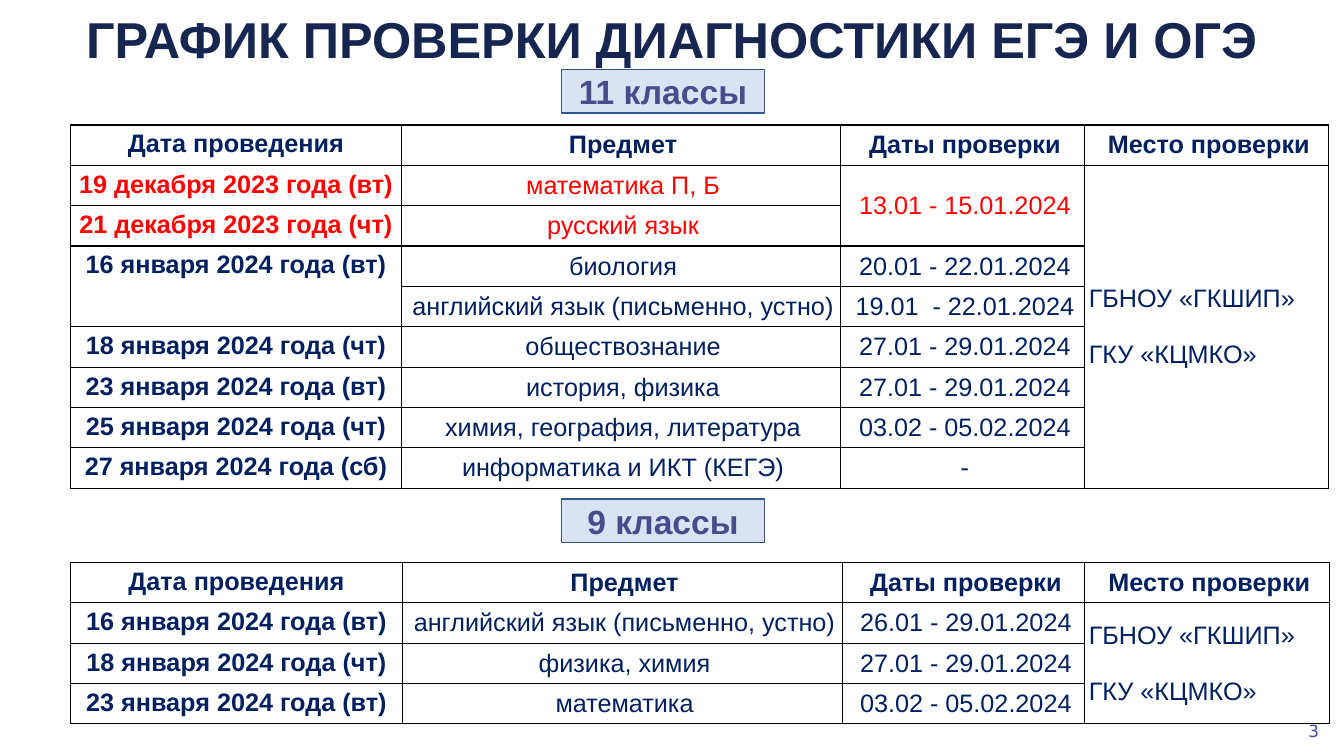
from pptx import Presentation
from pptx.dml.color import RGBColor
from pptx.enum.shapes import MSO_SHAPE as Shape
from pptx.enum.text import MSO_ANCHOR as Anchor, MSO_AUTO_SIZE as Fit, PP_ALIGN as Align
from pptx.oxml import parse_xml
from pptx.oxml.ns import nsdecls
from pptx.util import Inches, Pt

NAVY, RED, WHITE = "002060", "FF0000", "FFFFFF"
HEAD = ["Дата проведения", "Предмет", "Даты проверки", "Место проверки"]
PLACE = "ГБНОУ «ГКШИП»\nГКУ «КЦМКО»"

GRADE_11 = [
    HEAD,
    ["19 декабря 2023 года (вт)", "математика П, Б", "13.01 - 15.01.2024", PLACE],
    ["21 декабря 2023 года (чт)", "русский язык", None, None],
    ["16 января 2024 года (вт)", "биология", "20.01 - 22.01.2024", None],
    [None, "английский язык (письменно, устно)", "19.01  - 22.01.2024", None],
    ["18 января 2024 года (чт)", "обществознание", "27.01 - 29.01.2024", None],
    ["23 января 2024 года (вт)", "история, физика", "27.01 - 29.01.2024", None],
    ["25 января 2024 года (чт)", "химия, география, литература", "03.02 - 05.02.2024", None],
    ["27 января 2024 года (сб)", "информатика и ИКТ (КЕГЭ)", "-", None],
]
GRADE_9 = [
    HEAD,
    ["16 января 2024 года (вт)", "английский язык (письменно, устно)", "26.01 - 29.01.2024", PLACE],
    ["18 января 2024 года (чт)", "физика, химия", "27.01 - 29.01.2024", None],
    ["23 января 2024 года (вт)", "математика", "03.02 - 05.02.2024", None],
]


def color(code):
    return RGBColor.from_string(code)


class Page:
    font = "Arial"
    left = 0.7
    row = 0.4

    def __init__(self, deck):
        self.slide = deck.slides.add_slide(deck.slide_layouts[5])

    def style(self, par, size, tone, bold=False, align=Align.CENTER, font=None):
        par.alignment = align
        par.font.name = font or self.font
        par.font.size = Pt(size)
        par.font.bold = bold
        par.font.color.rgb = color(tone)

    def title(self, text):
        box = self.slide.shapes.title
        box.left, box.top = Inches(0), Inches(0.03)
        box.width, box.height = Inches(13.33), Inches(0.71)
        frame = box.text_frame
        frame.text = text
        frame.auto_size = Fit.SHAPE_TO_FIT_TEXT
        frame.vertical_anchor = Anchor.TOP
        par = frame.paragraphs[0]
        self.style(par, 36, "172551", True)
        fill = par.runs[0].font.fill
        fill.gradient()
        fill.gradient_angle = 270
        for stop, tone in zip(fill.gradient_stops, ("172551", "113494")):
            stop.color.rgb = color(tone)

    def number(self, text):
        box = self.slide.shapes.add_textbox(
            Inches(10.18), Inches(7.05), Inches(3), Inches(0.4))
        frame = box.text_frame
        frame.word_wrap = True
        frame.vertical_anchor = Anchor.MIDDLE
        frame.text = text
        self.style(frame.paragraphs[0], 12, "404888", False, Align.RIGHT, "DejaVu Sans")

    def label(self, text, top):
        box = self.slide.shapes.add_shape(
            Shape.RECTANGLE, Inches(5.57), Inches(top), Inches(2.01), Inches(0.43))
        box.shadow.inherit = False
        box.fill.solid()
        box.fill.fore_color.rgb = color("DAE3F3")
        box.line.color.rgb = color("325491")
        box.line.width = Pt(1)
        frame = box.text_frame
        frame.vertical_anchor = Anchor.MIDDLE
        frame.text = text
        self.style(frame.paragraphs[0], 24, "464D8A", True)

    def border(self, cell):
        props = cell._tc.get_or_add_tcPr()
        for side in "LRTB":
            props.append(parse_xml(
                f'<a:ln{side} {nsdecls("a")} w="12700"><a:solidFill>'
                f'<a:srgbClr val="000000"/></a:solidFill></a:ln{side}>'))

    def cell(self, cell, text, tone, bold, first):
        self.border(cell)
        cell.fill.solid()
        cell.fill.fore_color.rgb = color(WHITE)
        cell.margin_left = Inches(0 if first else 0.04)
        cell.margin_right = Inches(0)
        cell.margin_top = cell.margin_bottom = Inches(0.05)
        cell.vertical_anchor = Anchor.TOP if first else Anchor.MIDDLE
        if text is None:
            return
        cell.text = text
        align = Align.LEFT if text == PLACE else Align.CENTER
        for i, par in enumerate(cell.text_frame.paragraphs):
            self.style(par, 18, tone, bold, align)
            if i:
                par.space_before = Pt(20)

    def table(self, rows, top, widths, red=()):
        grid = self.slide.shapes.add_table(
            len(rows), len(widths), Inches(self.left), Inches(top),
            Inches(sum(widths)), Inches(self.row * len(rows))).table
        for col, width in zip(grid.columns, widths):
            col.width = Inches(width)
        for line in grid.rows:
            line.height = Inches(self.row)
        for r, row in enumerate(rows):
            for c, text in enumerate(row):
                tone = RED if r in red and text != PLACE else NAVY
                self.cell(grid.cell(r, c), text, tone, r == 0 or c == 0, c == 0)
        for c, col in enumerate(zip(*rows)):
            starts = [r for r, text in enumerate(col) if text is not None]
            for start, end in zip(starts, starts[1:] + [len(col)]):
                if end - start > 1:
                    grid.cell(start, c).merge(grid.cell(end - 1, c))


def main():
    deck = Presentation()
    deck.slide_width, deck.slide_height = Inches(13.33), Inches(7.5)
    page = Page(deck)
    page.number("3")
    page.table(GRADE_11, 1.24, (3.28, 4.36, 2.42, 2.42), red=(1, 2))
    page.title("ГРАФИК ПРОВЕРКИ ДИАГНОСТИКИ ЕГЭ И ОГЭ")
    page.label("11 классы", 0.69)
    page.table(GRADE_9, 5.58, (3.29, 4.37, 2.4, 2.43))
    page.label("9 классы", 4.95)
    deck.save("out.pptx")


if __name__ == "__main__":
    main()
